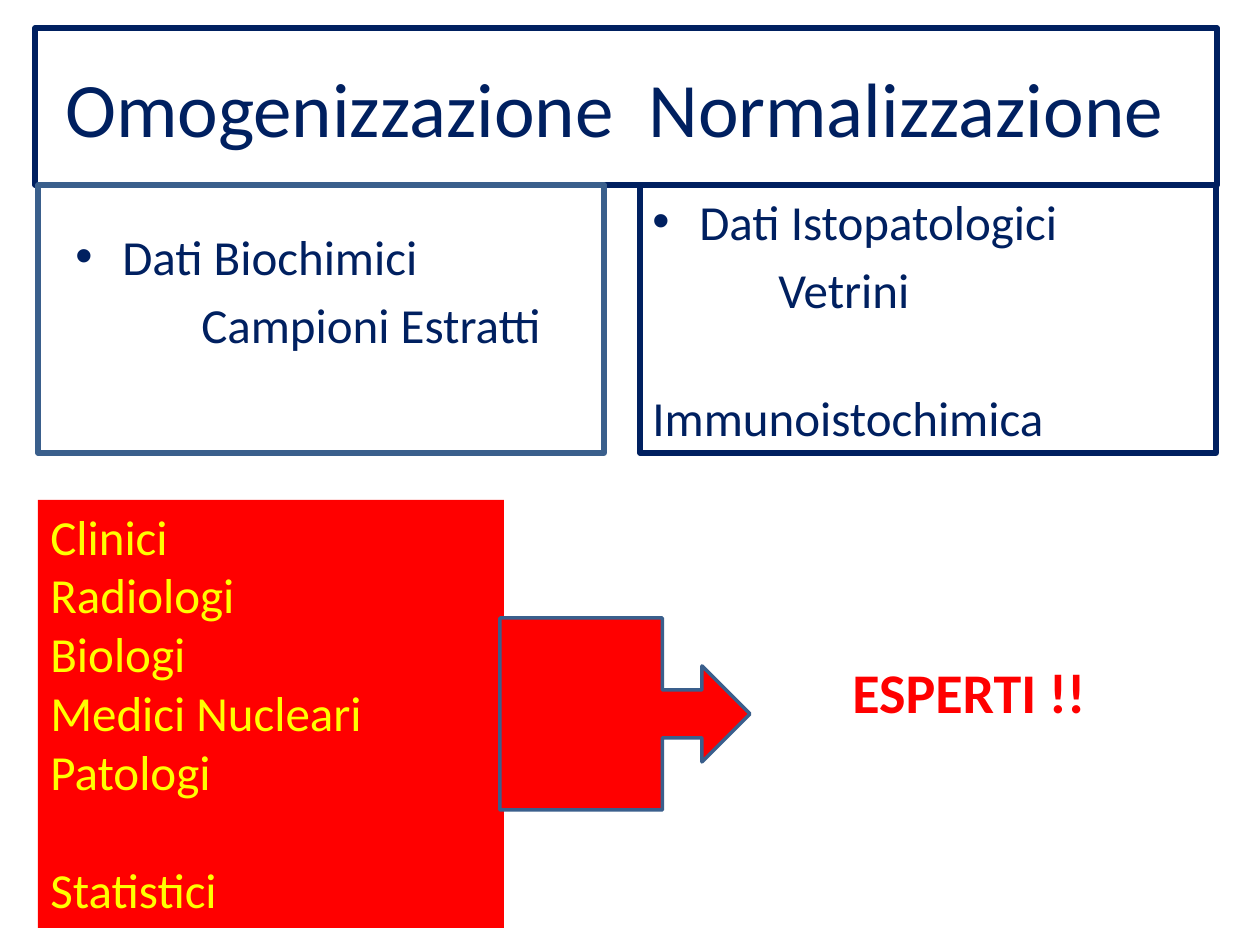
"""Builds the slide on homogenising and normalising clinical data."""
from dataclasses import dataclass

import lxml.etree
import pptx
import pptx.dml.color
import pptx.enum.shapes
import pptx.enum.text
import pptx.oxml.ns
import pptx.slide
import pptx.util

SHAPES = pptx.enum.shapes.MSO_SHAPE
ALIGN = pptx.enum.text.PP_ALIGN
ANCHOR = pptx.enum.text.MSO_ANCHOR
EMU_PER_PX = 914400 / 126


@dataclass(frozen=True)
class Theme:
    """Colours, font, type sizes and spacings in points."""
    navy: str = "002060"
    steel: str = "3A5F8C"
    red: str = "FF0000"
    yellow: str = "FFFF00"
    font: str = "Calibri"
    title: int = 44
    body: int = 28
    callout: int = 32
    gap: float = 5.6
    blank_line: int = 34


def px(length):
    """Turns px into EMU."""
    return pptx.util.Emu(round(length * EMU_PER_PX))


def colour(value):
    """Turns a hex string into a colour."""
    return pptx.dml.color.RGBColor.from_string(value)


@dataclass
class Builder:
    """Draws each kind of element on the current slide."""
    theme: Theme
    slide: pptx.slide.Slide

    def outline(self, shape, line, width):
        """Gives a shape its line, or none."""
        if line is None:
            shape.line.fill.background()
        else:
            shape.line.color.rgb = colour(line)
            shape.line.width = pptx.util.Pt(width)

    def add_text(self, paragraph, text, size, ink, bold=False):
        """Adds one formatted run."""
        run = paragraph.add_run()
        run.text = text
        run.font.name = self.theme.font
        run.font.size = pptx.util.Pt(size)
        run.font.bold = bold
        run.font.color.rgb = colour(ink)

    def prepare(self, frame, anchor=ANCHOR.TOP):
        """Sets wrapping and anchoring of a text frame."""
        frame.word_wrap = True
        frame.auto_size = pptx.enum.text.MSO_AUTO_SIZE.NONE
        frame.vertical_anchor = anchor

    def title(self, text, left, top, width, height, inset):
        """Places the title in its framed placeholder."""
        shape = self.slide.shapes.title
        shape.left, shape.top = px(left), px(top)
        shape.width, shape.height = px(width), px(height)
        self.outline(shape, self.theme.navy, 3)
        self.prepare(shape.text_frame, ANCHOR.MIDDLE)
        shape.text_frame.margin_left = px(inset)
        paragraph = shape.text_frame.paragraphs[0]
        paragraph.alignment = ALIGN.LEFT
        self.add_text(paragraph, text, self.theme.title, self.theme.navy)

    def shape(self, kind, left, top, width, height, fill=None, line=None, weight=3):
        """Adds a preset shape."""
        shape = self.slide.shapes.add_shape(kind, px(left), px(top), px(width), px(height))
        shape.shadow.inherit = False
        if fill is None:
            shape.fill.background()
        else:
            shape.fill.solid()
            shape.fill.fore_color.rgb = colour(fill)
        self.outline(shape, line, weight)
        self.prepare(shape.text_frame)
        return shape

    def text_box(self, left, top, width, height):
        """Adds an empty text box and returns its frame."""
        box = self.slide.shapes.add_textbox(px(left), px(top), px(width), px(height))
        self.prepare(box.text_frame)
        return box.text_frame

    def lines(self, frame, entries, size, ink, bold=False):
        """Fills a frame with (text, space before, indent) paragraphs."""
        for index, (text, space, indent) in enumerate(entries):
            paragraph = frame.add_paragraph() if index else frame.paragraphs[0]
            paragraph.alignment = ALIGN.LEFT
            paragraph.space_before = pptx.util.Pt(space)
            paragraph._p.get_or_add_pPr().set("marL", str(px(indent)))
            self.add_text(paragraph, text, size, ink, bold)

    def bullet(self, paragraph, hang):
        """Gives a paragraph a hanging bullet."""
        properties = paragraph._p.get_or_add_pPr()
        properties.set("marL", str(px(hang)))
        properties.set("indent", str(-px(hang)))
        for tag, key, value in (("a:buFont", "typeface", "Arial"), ("a:buChar", "char", "•")):
            lxml.etree.SubElement(properties, pptx.oxml.ns.qn(tag)).set(key, value)

    def data_list(self, frame, entries):
        """Fills a frame with a bulleted heading and its indented details."""
        self.lines(frame, entries, self.theme.body, self.theme.navy)
        self.bullet(frame.paragraphs[0], 47)


def main():
    """Builds and saves the presentation."""
    theme = Theme()
    presentation = pptx.Presentation()
    presentation.slide_width, presentation.slide_height = px(1260), px(945)
    builder = Builder(theme, presentation.slides.add_slide(presentation.slide_layouts[5]))

    builder.title("Omogenizzazione  Normalizzazione", 35, 28, 1182, 157, inset=30)
    builder.data_list(builder.text_box(63, 220, 557, 624), [
        ("Dati Biochimici", 0, 0),
        ("Campioni Estratti", theme.gap, 126),
    ])
    histology = builder.shape(SHAPES.RECTANGLE, 640, 185, 576, 268, line=theme.navy)
    builder.data_list(histology.text_frame, [
        ("Dati Istopatologici", 0, 0),
        ("Vetrini", theme.gap, 126),
        ("Immunoistochimica", theme.gap + theme.blank_line, 0),
    ])
    builder.shape(SHAPES.RECTANGLE, 38, 185, 566, 268, line=theme.steel)

    specialists = builder.shape(SHAPES.RECTANGLE, 38, 500, 466, 428, fill=theme.red)
    names = ["Clinici", "Radiologi", "Biologi", "Medici Nucleari", "Patologi"]
    entries = [(name, 0, 0) for name in names] + [("Statistici", theme.blank_line, 0)]
    builder.lines(specialists.text_frame, entries, theme.body, theme.yellow)

    experts = builder.text_box(840, 651, 287, 81)
    builder.lines(experts, [("ESPERTI !!", 0, 0)], theme.callout, theme.red, bold=True)
    builder.shape(SHAPES.RIGHT_ARROW_CALLOUT, 500, 618, 250, 192,
                  fill=theme.red, line=theme.steel, weight=2)
    presentation.save("out.pptx")


if __name__ == "__main__":
    main()
